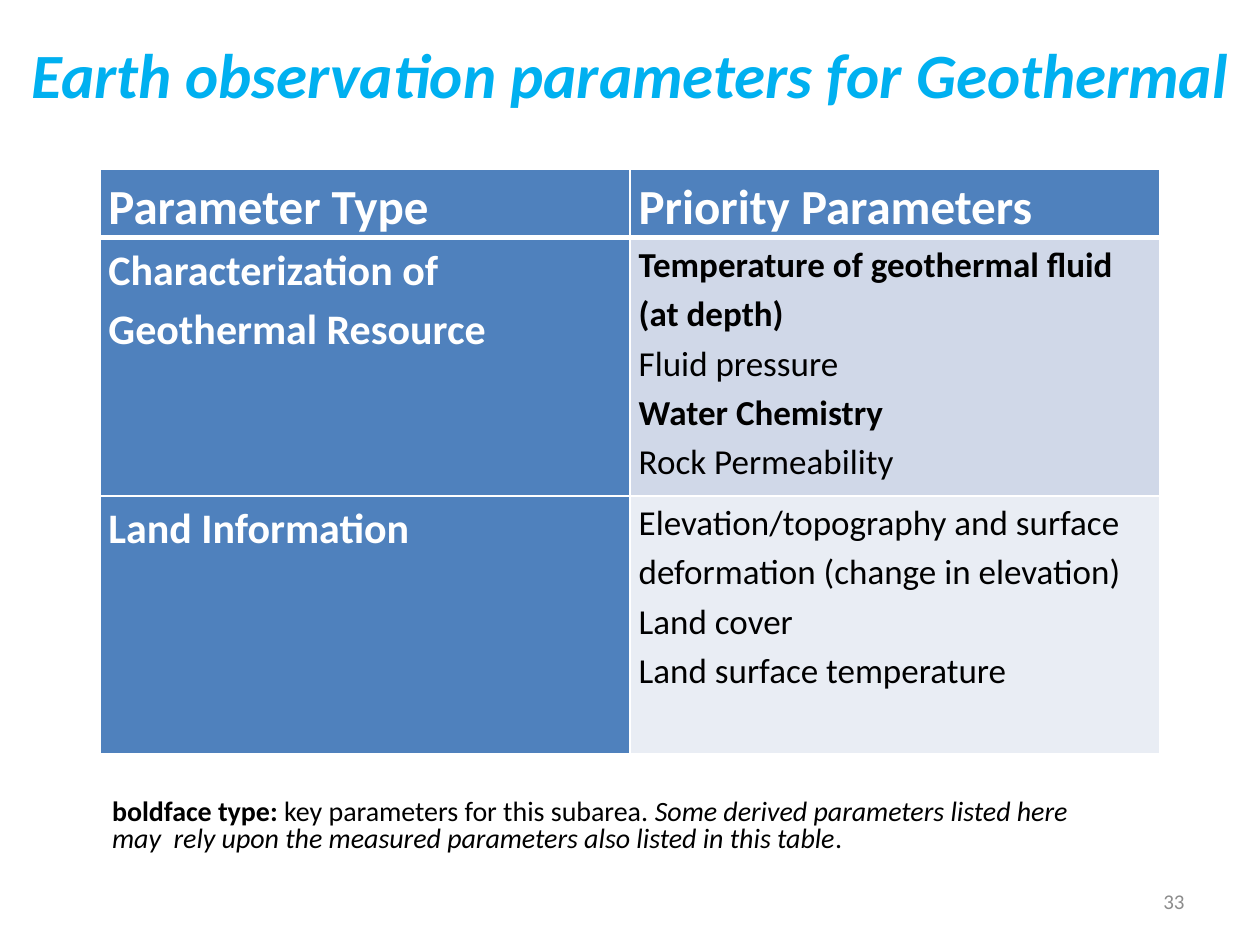
from lxml.etree import SubElement
from pptx import Presentation
from pptx.dml.color import RGBColor
from pptx.enum.text import MSO_ANCHOR, MSO_AUTO_SIZE, PP_ALIGN
from pptx.oxml.ns import qn
from pptx.util import Pt

COLORS = {
    "title": "00B0F0",
    "header": "4F81BD",
    "band_dark": "D0D8E8",
    "band_light": "E9EDF4",
    "white": "FFFFFF",
    "black": "000000",
    "number": "8C8C8C",
}


class SlideBuilder:
    font_name = "Calibri"

    def __init__(self, slide):
        self.slide = slide

    def format_font(self, font, size, color, **styles):
        values = {"name": self.font_name, "size": Pt(size), "bold": False,
                  "italic": False, **styles}
        for name, value in values.items():
            setattr(font, name, value)
        font.color.rgb = RGBColor.from_string(COLORS[color])

    def format_frame(self, frame, **values):
        defaults = {"word_wrap": True, "auto_size": MSO_AUTO_SIZE.NONE}
        for name, value in {**defaults, **values}.items():
            setattr(frame, name, value)

    def title(self, text, box, size):
        shape = self.slide.shapes.title
        shape.left, shape.top, shape.width, shape.height = map(Pt, box)
        self.format_frame(shape.text_frame, vertical_anchor=MSO_ANCHOR.MIDDLE)
        paragraph = shape.text_frame.paragraphs[0]
        paragraph.alignment = PP_ALIGN.CENTER
        run = paragraph.add_run()
        run.text = text
        self.format_font(run.font, size, "title", bold=True, italic=True)

    def text(self, lines, box, size, color, align=PP_ALIGN.LEFT,
             anchor=MSO_ANCHOR.TOP, spacing=1.0):
        """Each line is a list of (text, font styles) runs."""
        frame = self.slide.shapes.add_textbox(*map(Pt, box)).text_frame
        self.format_frame(frame, vertical_anchor=anchor)
        paragraph = frame.paragraphs[0]
        paragraph.alignment = align
        paragraph.line_spacing = spacing
        for index, line in enumerate(lines):
            if index:
                paragraph.add_line_break()
            for text, styles in line:
                run = paragraph.add_run()
                run.text = text
                self.format_font(run.font, size, color, **styles)

    def table(self, rows, box, heights):
        """Each cell is (fill, size, color, [(text, bold), ...])."""
        columns = len(rows[0])
        table = self.slide.shapes.add_table(len(rows), columns, *map(Pt, box)).table
        for column in table.columns:
            column.width = Pt(box[2] / columns)
        for row, height in zip(table.rows, heights):
            row.height = Pt(height)
        for row_index, row in enumerate(rows):
            for column_index, content in enumerate(row):
                cell = table.cell(row_index, column_index)
                self.cell(cell, *content)
                self.borders(cell, top=3 if row_index == 1 else 1,
                             bottom=3 if row_index == 0 else 1)

    def cell(self, cell, fill, size, color, paragraphs):
        margins = {"margin_left": 5, "margin_right": 5,
                   "margin_top": 0, "margin_bottom": 0}
        for name, value in margins.items():
            setattr(cell, name, Pt(value))
        frame = cell.text_frame
        for index, (text, bold) in enumerate(paragraphs):
            paragraph = frame.add_paragraph() if index else frame.paragraphs[0]
            paragraph.line_spacing = 1.15
            run = paragraph.add_run()
            run.text = text
            self.format_font(run.font, size, color, bold=bold)
        # Borders must precede the fill in the cell properties
        cell.fill.solid()
        cell.fill.fore_color.rgb = RGBColor.from_string(COLORS[fill])

    def borders(self, cell, top, bottom):
        properties = cell._tc.get_or_add_tcPr()
        widths = {"a:lnL": 1, "a:lnR": 1, "a:lnT": top, "a:lnB": bottom}
        for position, (tag, width) in enumerate(widths.items()):
            line = SubElement(properties, qn(tag), w=str(Pt(width)))
            fill = SubElement(line, qn("a:solidFill"))
            SubElement(fill, qn("a:srgbClr"), val=COLORS["white"])
            properties.insert(position, line)


def main():
    presentation = Presentation()
    presentation.slide_width, presentation.slide_height = Pt(720), Pt(540)
    slide = presentation.slides.add_slide(presentation.slide_layouts[5])
    builder = SlideBuilder(slide)

    # Title
    builder.title("Earth observation parameters for Geothermal", (0, 14, 720, 56), 36)

    # Parameter table
    def label(text, size=24):
        return "header", size, "white", [(text, True)]

    rows = [
        [label("Parameter Type", 28), label("Priority Parameters", 28)],
        [label("Characterization of Geothermal Resource"),
         ("band_dark", 20, "black", [
             ("Temperature of geothermal fluid (at depth)", True),
             ("Fluid pressure", False),
             ("Water Chemistry", True),
             ("Rock Permeability", False)])],
        [label("Land Information"),
         ("band_light", 20, "black", [
             ("Elevation/topography and surface deformation (change in elevation)", False),
             ("Land cover", False),
             ("Land surface temperature", False)])],
    ]
    builder.table(rows, (57, 96.5, 606, 333.5), (38.5, 147.5, 147.5))

    # Note on boldface
    italic = {"italic": True}
    note = [
        [("boldface type: ", {"bold": True}),
         ("key parameters for this subarea. ", {}),
         ("Some derived parameters listed here", italic)],
        [("may  rely upon the measured parameters also listed in this table", italic),
         (".", {})],
    ]
    builder.text(note, (57, 453.5, 603, 39), 16, "black", spacing=0.8)

    # Slide number
    builder.text([[("33", {})]], (516, 500.5, 168, 29), 12, "number",
                 align=PP_ALIGN.RIGHT, anchor=MSO_ANCHOR.MIDDLE)

    presentation.save("out.pptx")


if __name__ == "__main__":
    main()
